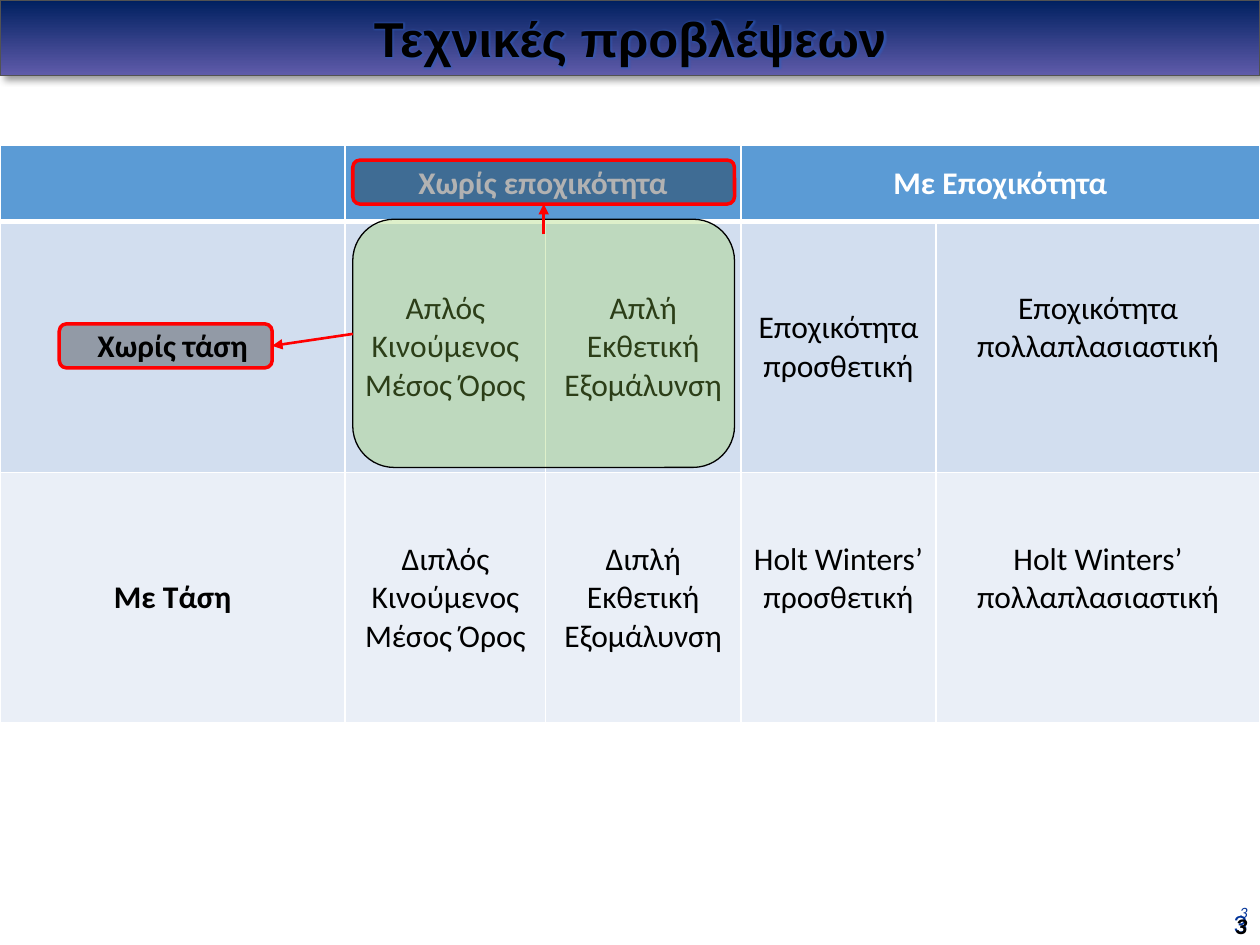
from dataclasses import dataclass

import lxml.etree
import pptx
import pptx.dml.color
import pptx.enum.dml
import pptx.enum.shapes
import pptx.enum.text
import pptx.oxml
import pptx.oxml.ns
import pptx.util

SHAPE = pptx.enum.shapes.MSO_SHAPE
ALIGN = pptx.enum.text.PP_ALIGN
ANCHOR = pptx.enum.text.MSO_ANCHOR
A_NS = 'xmlns:a="http://schemas.openxmlformats.org/drawingml/2006/main"'

# The slide is a grid of 100 columns by 75 rows
SLIDE_WIDTH, SLIDE_HEIGHT = pptx.util.Inches(10), pptx.util.Inches(7.5)
GRID_COLUMNS = 100


@dataclass(frozen=True)
class Theme:
    heading_font: str = "Arial"
    body_font: str = "Calibri"
    title_size: int = 28
    table_size: int = 18
    black: str = "000000"
    white: str = "FFFFFF"
    banner_top: str = "002060"
    banner_bottom: str = "5F5BAA"
    banner_edge: str = "525252"
    glow: str = "2F5FC0"
    number: str = "003399"
    header: str = "5B9BD5"
    bands: tuple = ("D2DEEF", "EAEFF7")
    highlight: str = "92D050"
    accent: str = "FF0000"


THEME = Theme()

COLUMN_WIDTHS = [27.4, 15.9, 15.5, 15.5, 25.7]
ROW_HEIGHTS = [6.1, 19.9, 19.9]
SEASON_HEADINGS = {1: "Χωρίς εποχικότητα", 3: "Με Εποχικότητα"}
TECHNIQUES = [
    ["Χωρίς τάση", "Απλός Κινούμενος Μέσος Όρος", "Απλή Εκθετική Εξομάλυνση",
     "Εποχικότητα προσθετική", "Εποχικότητα\nπολλαπλασιαστική"],
    ["Με Τάση", "Διπλός Κινούμενος Μέσος Όρος", "Διπλή Εκθετική Εξομάλυνση",
     "Holt Winters’ προσθετική", "Holt Winters’\nπολλαπλασιαστική"],
]
# Cells (row, column) whose text sits half a line above the middle
RAISED_CELLS = {(1, 4), (2, 3), (2, 4)}


def grid(*units):
    return [round(SLIDE_WIDTH * unit / GRID_COLUMNS) for unit in units]


def rgb(color):
    return pptx.dml.color.RGBColor.from_string(color)


def xml(markup):
    return pptx.oxml.parse_xml(markup.replace(">", f" {A_NS}>", 1))


def write(frame, text, font, size, color, align, anchor, bold=False, italic=False):
    frame.word_wrap = True
    frame.vertical_anchor = anchor
    for index, line in enumerate(text.split("\n")):
        paragraph = frame.paragraphs[0] if index == 0 else frame.add_paragraph()
        paragraph.alignment = align
        run = paragraph.add_run()
        run.text = line
        run.font.name, run.font.size = font, pptx.util.Pt(size)
        run.font.bold, run.font.italic = bold, italic
        run.font.color.rgb = rgb(color)


def set_line(shape, color, width):
    shape.line.color.rgb = rgb(color)
    shape.line.width = pptx.util.Pt(width)


def add_banner(slide):
    title = slide.shapes.title
    title.left, title.top, title.width, title.height = grid(0, 0, 100, 6)
    title.fill.gradient()
    title.fill.gradient_angle = 270
    for stop, color in zip(title.fill.gradient_stops, (THEME.banner_top, THEME.banner_bottom)):
        stop.color.rgb = rgb(color)
    set_line(title, THEME.banner_edge, 0.75)
    title.element.spPr.append(xml(
        '<a:effectLst><a:outerShdw blurRad="50800" dist="38100" dir="2700000">'
        f'<a:srgbClr val="{THEME.black}"><a:alpha val="40000"/></a:srgbClr>'
        '</a:outerShdw></a:effectLst>'))
    write(title.text_frame, "Τεχνικές προβλέψεων", THEME.heading_font, THEME.title_size,
          THEME.black, ALIGN.CENTER, ANCHOR.MIDDLE, bold=True)
    title.text_frame.auto_size = pptx.enum.text.MSO_AUTO_SIZE.NONE
    # Blue glow behind the letters
    text_color = title.element.find(".//" + pptx.oxml.ns.qn("a:rPr")).find(
        pptx.oxml.ns.qn("a:solidFill"))
    text_color.addnext(xml(
        f'<a:effectLst><a:glow rad="38100"><a:srgbClr val="{THEME.glow}">'
        '<a:alpha val="60000"/></a:srgbClr></a:glow></a:effectLst>'))


def style_cell(cell, fill, bottom_width):
    cell.fill.solid()
    cell.fill.fore_color.rgb = rgb(fill)
    borders = {"lnL": 1, "lnR": 1, "lnT": 1, "lnB": bottom_width}
    for index, (side, width) in enumerate(borders.items()):
        cell._tc.get_or_add_tcPr().insert(index, xml(
            f'<a:{side} w="{pptx.util.Pt(width)}"><a:solidFill>'
            f'<a:srgbClr val="{THEME.white}"/></a:solidFill></a:{side}>'))


def write_cell(cell, text, color, bold):
    cell.vertical_anchor = ANCHOR.MIDDLE
    write(cell.text_frame, text, THEME.body_font, THEME.table_size, color,
          ALIGN.CENTER, ANCHOR.MIDDLE, bold)


def add_techniques_table(slide):
    table = slide.shapes.add_table(
        len(ROW_HEIGHTS), len(COLUMN_WIDTHS),
        *grid(0, 11.5, sum(COLUMN_WIDTHS), sum(ROW_HEIGHTS))).table
    for column, width in zip(table.columns, grid(*COLUMN_WIDTHS)):
        column.width = width
    for row, height in zip(table.rows, grid(*ROW_HEIGHTS)):
        row.height = height
    # Header row: each heading spans two columns
    for column in range(len(COLUMN_WIDTHS)):
        style_cell(table.cell(0, column), THEME.header, 3)
    for column, heading in SEASON_HEADINGS.items():
        table.cell(0, column).merge(table.cell(0, column + 1))
        write_cell(table.cell(0, column), heading, THEME.white, True)
    # Body rows
    for row, (techniques, band) in enumerate(zip(TECHNIQUES, THEME.bands), start=1):
        for column, technique in enumerate(techniques):
            cell = table.cell(row, column)
            style_cell(cell, band, 1)
            write_cell(cell, technique, THEME.black, column == 0)
            if (row, column) in RAISED_CELLS:
                cell.margin_bottom = grid(3.55)[0]


def add_highlight(slide, place, fill, line, line_width):
    highlight = slide.shapes.add_shape(SHAPE.ROUNDED_RECTANGLE, *grid(*place))
    highlight.shadow.inherit = False
    highlight.fill.solid()
    highlight.fill.fore_color.rgb = rgb(fill)
    tint = highlight.element.spPr.find(".//" + pptx.oxml.ns.qn("a:srgbClr"))
    tint.append(xml('<a:alpha val="30000"/>'.replace("/>", "></a:alpha>")))
    set_line(highlight, line, line_width)
    return highlight


def add_arrow(slide, start, target, side):
    arrow = slide.shapes.add_connector(
        pptx.enum.shapes.MSO_CONNECTOR.STRAIGHT, *grid(*start, *start))
    arrow.end_connect(target, side)
    set_line(arrow, THEME.accent, 1.5)
    arrow.line._get_or_add_ln().append(xml('<a:tailEnd type="triangle"></a:tailEnd>'))
    arrow._element.spPr.append(xml("<a:effectLst></a:effectLst>"))


def add_slide_number(slide, place, font, size, color, anchor, bold=False, italic=False):
    number = slide.shapes.add_textbox(*grid(*place))
    write(number.text_frame, "3", font, size, color, ALIGN.RIGHT, anchor, bold, italic)


def main():
    deck = pptx.Presentation()
    deck.slide_width, deck.slide_height = SLIDE_WIDTH, SLIDE_HEIGHT
    slide = deck.slides.add_slide(deck.slide_layouts[5])

    # Slide numbers
    footer = (76.7, 69.8, 23.3, 5.2)
    add_slide_number(slide, footer, THEME.body_font, 9, THEME.number, ANCHOR.MIDDLE, italic=True)
    add_slide_number(slide, footer, THEME.heading_font, 14, THEME.number, ANCHOR.BOTTOM)
    add_slide_number(slide, (95, 72, 5, 3), THEME.heading_font, 12, THEME.black,
                     ANCHOR.BOTTOM, bold=True, italic=True)

    add_techniques_table(slide)
    add_banner(slide)

    # Techniques without trend or seasonality, and the headings they belong to
    add_highlight(slide, (28, 17.4, 30.3, 19.7), THEME.highlight, THEME.black, 0.75)
    no_season = add_highlight(slide, (28, 12.7, 30.3, 3.5), THEME.black, THEME.accent, 2)
    no_trend = add_highlight(slide, (4.7, 25.7, 16.9, 3.5), THEME.black, THEME.accent, 2)
    add_arrow(slide, (28, 26.5), no_trend, 3)
    add_arrow(slide, (43.15, 18.6), no_season, 2)

    deck.save("out.pptx")


if __name__ == "__main__":
    main()
